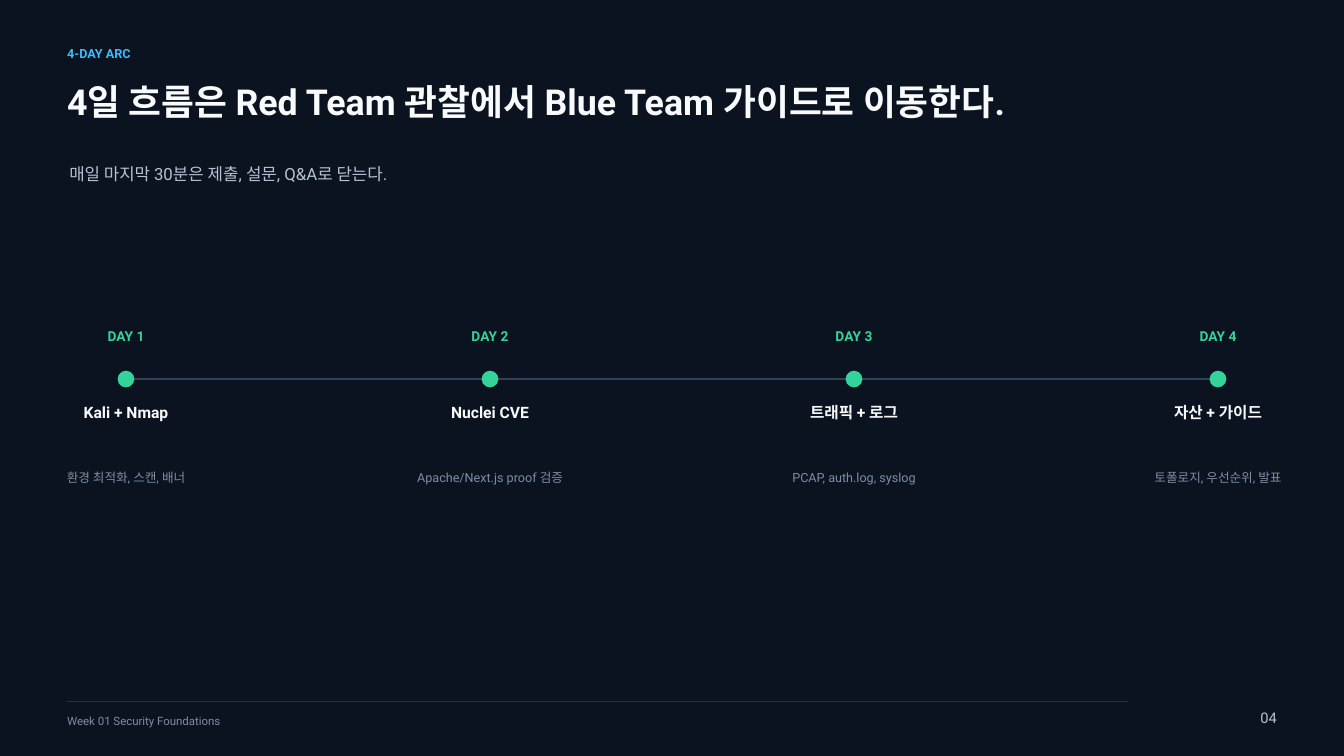
from pptx import Presentation
from pptx.dml.color import RGBColor
from pptx.enum.shapes import MSO_CONNECTOR, MSO_SHAPE
from pptx.enum.text import MSO_ANCHOR, MSO_AUTO_SIZE, PP_ALIGN
from pptx.oxml.ns import qn
from pptx.util import Inches, Pt
from lxml import etree

LEFT, CENTER, RIGHT = PP_ALIGN.LEFT, PP_ALIGN.CENTER, PP_ALIGN.RIGHT
TOP, NO_FIT = MSO_ANCHOR.TOP, MSO_AUTO_SIZE.NONE
STRAIGHT, OVAL = MSO_CONNECTOR.STRAIGHT, MSO_SHAPE.OVAL

NIGHT = RGBColor(0x0B, 0x12, 0x20)
SKY = RGBColor(0x38, 0xBD, 0xF8)
WHITE = RGBColor(0xF8, 0xFA, 0xFC)
SILVER = RGBColor(0xB6, 0xC2, 0xD1)
SLATE = RGBColor(0x7D, 0x8E, 0xA3)
GREEN = RGBColor(0x34, 0xD3, 0x99)
TRACK = RGBColor(0x30, 0x41, 0x58)
RULE = RGBColor(0x24, 0x32, 0x44)

FONT = "Roboto"
COLUMNS, ROWS = 1280, 720  # fine layout grid of square cells
CELL = Inches(7.5) // ROWS

EYEBROW = {"size": Pt(9), "bold": True, "color": SKY}
HEADLINE = {"size": Pt(25.5), "bold": True, "color": WHITE}
SUBTITLE = {"size": Pt(12), "bold": False, "color": SILVER}
DAY = {"size": Pt(9.8), "bold": True, "color": GREEN}
TOPIC = {"size": Pt(11.2), "bold": True, "color": WHITE}
DETAIL = {"size": Pt(9), "bold": False, "color": SLATE}
COURSE = {"size": Pt(8.2), "bold": False, "color": SLATE}
PAGE = {"size": Pt(10.5), "bold": False, "color": SILVER}

DAYS = [
    ("DAY 1", "Kali + Nmap", "환경 최적화, 스캔, 배너"),
    ("DAY 2", "Nuclei CVE", "Apache/Next.js proof 검증"),
    ("DAY 3", "트래픽 + 로그", "PCAP, auth.log, syslog"),
    ("DAY 4", "자산 + 가이드", "토폴로지, 우선순위, 발표"),
]


def cells(*counts):
    return [round(count * CELL) for count in counts]


def write(shape, text, style, align=LEFT):
    frame = shape.text_frame
    frame_format = {"margin_left": 0, "margin_top": 0, "margin_right": 0, "margin_bottom": 0,
                    "word_wrap": True, "auto_size": NO_FIT, "vertical_anchor": TOP}
    for name, value in frame_format.items():
        setattr(frame, name, value)
    paragraph = frame.paragraphs[0]
    paragraph.alignment = align
    run = paragraph.add_run()
    run.text = text
    for name, value in {"name": FONT, "size": style["size"], "bold": style["bold"]}.items():
        setattr(run.font, name, value)
    run.font.color.rgb = style["color"]


def add_text(slide, box, text, style, align=LEFT):
    write(slide.shapes.add_textbox(*cells(*box)), text, style, align)


def add_rule(slide, left, y, width, color, weight):
    rule = slide.shapes.add_connector(STRAIGHT, *cells(left, y, left + width, y))
    rule.line.color.rgb = color
    rule.line.width = weight
    etree.SubElement(rule._element.spPr, qn("a:effectLst"))


def add_header(slide, left, top, width):
    add_text(slide, (left, top, 0.3 * width, 22), "4-DAY ARC", EYEBROW)
    title = slide.shapes.title
    title.left, title.top, title.width, title.height = cells(left, top + 32, width, 82)
    write(title, "4일 흐름은 Red Team 관찰에서 Blue Team 가이드로 이동한다.", HEADLINE)
    add_text(slide, (left + 2, top + 112, width + 20, 44),
             "매일 마지막 30분은 제출, 설문, Q&A로 닫는다.", SUBTITLE)


def add_milestone(slide, center, axis, day, topic, detail):
    radius = 8
    dot = slide.shapes.add_shape(
        OVAL, *cells(center - radius, axis - radius, 2 * radius, 2 * radius))
    dot.shadow.inherit = False
    dot.fill.solid()
    dot.fill.fore_color.rgb = GREEN
    dot.line.fill.background()
    labels = [(day, DAY, -49, 88, 22), (topic, TOPIC, 23, 164, 62), (detail, DETAIL, 87, 180, 52)]
    for text, style, offset, width, height in labels:
        add_text(slide, (center - width / 2, axis + offset, width, height), text, style, CENTER)


def add_timeline(slide, left, axis, width):
    add_rule(slide, left, axis, width, TRACK, Pt(1.5))
    step = width / (len(DAYS) - 1)
    for index, entry in enumerate(DAYS):
        add_milestone(slide, left + index * step, axis, *entry)


def add_footer(slide, left, top, right):
    add_rule(slide, left, top, 1010, RULE, Pt(0.75))
    add_text(slide, (left, top + 12, 600, 20), "Week 01 Security Foundations", COURSE)
    add_text(slide, (right - 46, top + 7, 46, 26), "04", PAGE, RIGHT)


def main():
    deck = Presentation()
    deck.slide_width, deck.slide_height = cells(COLUMNS, ROWS)
    title_only = deck.slide_layouts[5]
    slide = deck.slides.add_slide(title_only)
    slide.background.fill.solid()
    slide.background.fill.fore_color.rgb = NIGHT
    margin = COLUMNS / 20
    add_header(slide, margin, 44, 900)
    add_timeline(slide, 120, 361, COLUMNS - 2 * 120)
    add_footer(slide, margin, 668, COLUMNS - margin)
    deck.save("out.pptx")


if __name__ == "__main__":
    main()
